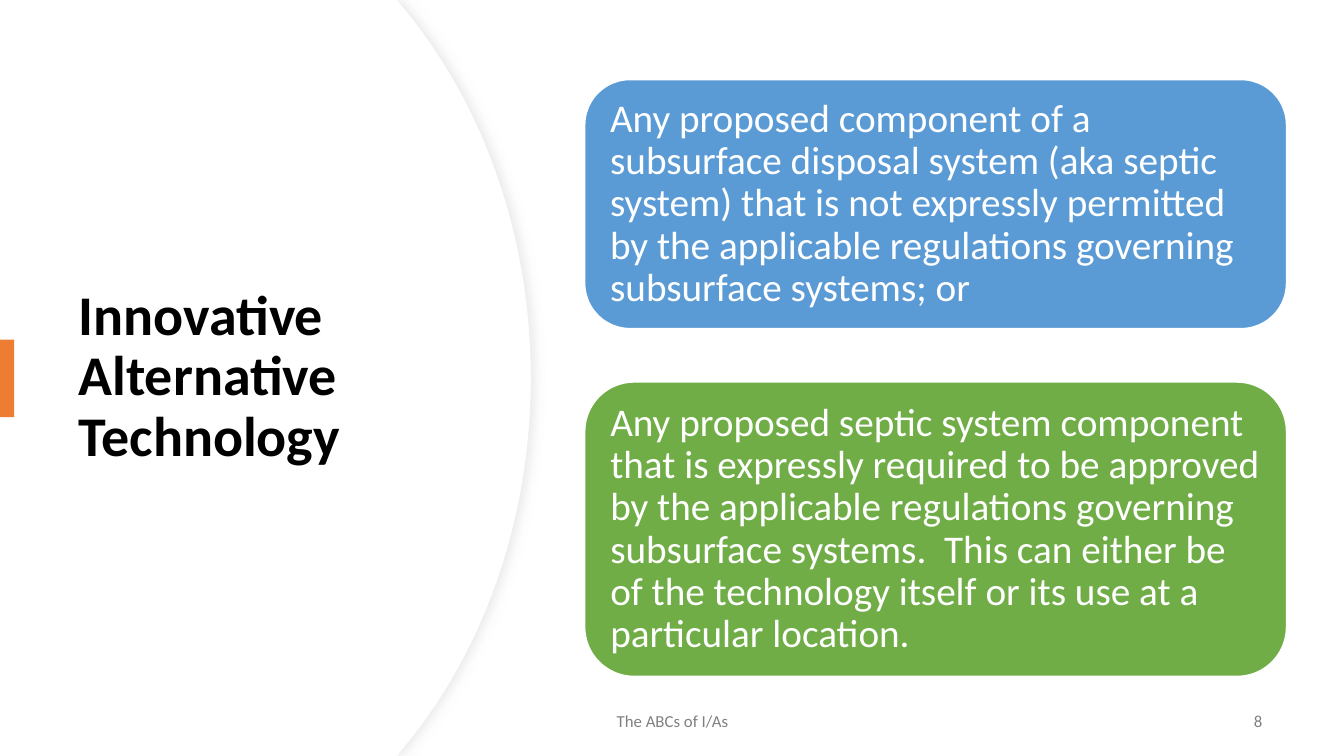
from lxml import etree
from pptx import Presentation
from pptx.dml.color import RGBColor
from pptx.enum.shapes import MSO_SHAPE as Shape
from pptx.enum.text import MSO_ANCHOR as Anchor, MSO_AUTO_SIZE as AutoSize, PP_ALIGN as Align
from pptx.oxml.ns import nsdecls
from pptx.util import Pt

PX = 9144  # EMU per px, 100 px to the inch
WIDTH, HEIGHT = 1333, 750

WHITE = RGBColor(0xFF, 0xFF, 0xFF)
BLACK = RGBColor(0x00, 0x00, 0x00)
GRAY = RGBColor(0x80, 0x80, 0x80)
PALE_GRAY = RGBColor(0xEF, 0xEF, 0xEF)
BLUE = RGBColor(0x5B, 0x9B, 0xD5)
GREEN = RGBColor(0x70, 0xAD, 0x47)
ORANGE = RGBColor(0xED, 0x7D, 0x31)

SOFT_SHADOW = (
    f'<a:outerShdw {nsdecls("a")} blurRad="{7 * 12700}" dist="{3 * 12700}" dir="0" '
    'algn="l" rotWithShape="0"><a:srgbClr val="D9D9D9"><a:alpha val="50000"/>'
    '</a:srgbClr></a:outerShdw>'
)


def curve(start, control_1, control_2, end, steps=24):
    """Points along a cubic Bezier curve, without its start."""
    points = []
    for step in range(1, steps + 1):
        t = step / steps
        u = 1 - t
        points.append(tuple(
            u**3 * a + 3 * u * u * t * b + 3 * u * t * t * c + t**3 * d
            for a, b, c, d in zip(start, control_1, control_2, end)))
    return points


class SlideBuilder:
    font_name = "Calibri"

    def __init__(self, presentation):
        self.slide = presentation.slides.add_slide(presentation.slide_layouts[5])
        self.shapes = self.slide.shapes

    def place(self, shape, left, top, width, height):
        shape.left, shape.top = left * PX, top * PX
        shape.width, shape.height = width * PX, height * PX

    def paint(self, shape, fill, line=None, line_width=1):
        shape.shadow.inherit = False
        shape.fill.solid()
        shape.fill.fore_color.rgb = fill
        if line is None:
            shape.line.fill.background()
        else:
            shape.line.color.rgb = line
            shape.line.width = Pt(line_width)

    def set_text(self, shape, text, size, color, bold=False, align=Align.LEFT, spacing=1.0):
        frame = shape.text_frame
        frame.word_wrap = True
        frame.auto_size = AutoSize.NONE
        frame.vertical_anchor = Anchor.MIDDLE
        frame.text = text
        paragraph = frame.paragraphs[0]
        paragraph.alignment = align
        paragraph.line_spacing = spacing
        paragraph.font.name = self.font_name
        paragraph.font.size = Pt(size)
        paragraph.font.bold = bold
        paragraph.font.color.rgb = color

    def curved_panel(self, right, line=None, shadow=False):
        middle = HEIGHT / 2
        shoulder = (right - 126, 8)
        upper = curve(shoulder, (right - 48, 102), (right, 232), (right, middle))
        lower = [(x, HEIGHT - y) for x, y in reversed([shoulder] + upper[:-1])]
        outline = [(394, 0), shoulder, *upper, *lower, (394, HEIGHT), (0, HEIGHT)]
        builder = self.shapes.build_freeform(0, 0, scale=1.0)
        builder.add_line_segments([(x * PX, y * PX) for x, y in outline], close=True)
        panel = builder.convert_to_shape()
        self.paint(panel, WHITE, line, 0.75)
        if shadow:
            effects = panel._element.spPr.find("{*}effectLst")
            effects.append(etree.fromstring(SOFT_SHADOW))

    def title(self, text, *box):
        title = self.shapes.title
        self.place(title, *box)
        self.set_text(title, text, 40, BLACK, bold=True, spacing=0.9)
        self.shapes._spTree.append(title._element)  # in front of the panels

    def bar(self, color, *box):
        bar = self.shapes.add_shape(Shape.RECTANGLE, 0, 0, 0, 0)
        self.place(bar, *box)
        self.paint(bar, color)

    def label(self, text, align, *box):
        label = self.shapes.add_textbox(0, 0, 0, 0)
        self.place(label, *box)
        self.set_text(label, text, 12, GRAY, align=align)

    def card(self, text, color, top, height, radius):
        card = self.shapes.add_shape(Shape.ROUNDED_RECTANGLE, 0, 0, 0, 0)
        self.place(card, 580, top, 696, height)
        card.adjustments[0] = radius / height
        self.paint(card, color, WHITE)
        self.set_text(card, text, 28, WHITE, spacing=0.9)
        # Rounded corners already push the text in by 0.29 of the radius
        inset = round(25 - 0.29 * radius) * PX
        frame = card.text_frame
        frame.margin_left = frame.margin_right = inset
        frame.margin_top = frame.margin_bottom = inset


def main():
    presentation = Presentation()
    presentation.slide_width = WIDTH * PX
    presentation.slide_height = HEIGHT * PX
    builder = SlideBuilder(presentation)

    # Curved title panel: outlined layer below, plain layer above
    builder.curved_panel(527, line=PALE_GRAY, shadow=True)
    builder.curved_panel(526)
    builder.title("Innovative Alternative Technology", 68, 127, 394, 495)
    builder.bar(ORANGE, 0, 337, 14, 77)

    # Footer
    builder.label("The ABCs of I/As", Align.CENTER, 442, 695, 450, 40)
    builder.label("8", Align.RIGHT, 962, 695, 300, 40)

    # Definition cards
    builder.card(
        "Any proposed component of a subsurface disposal system (aka septic system) "
        "that is not expressly permitted by the applicable regulations governing "
        "subsurface systems; or", BLUE, top=79, height=247, radius=45)
    builder.card(
        "Any proposed septic system component that is expressly required to be "
        "approved by the applicable regulations governing subsurface systems.  This "
        "can either be of the technology itself or its use at a particular location.",
        GREEN, top=379, height=292, radius=49)

    presentation.save("out.pptx")


if __name__ == "__main__":
    main()
